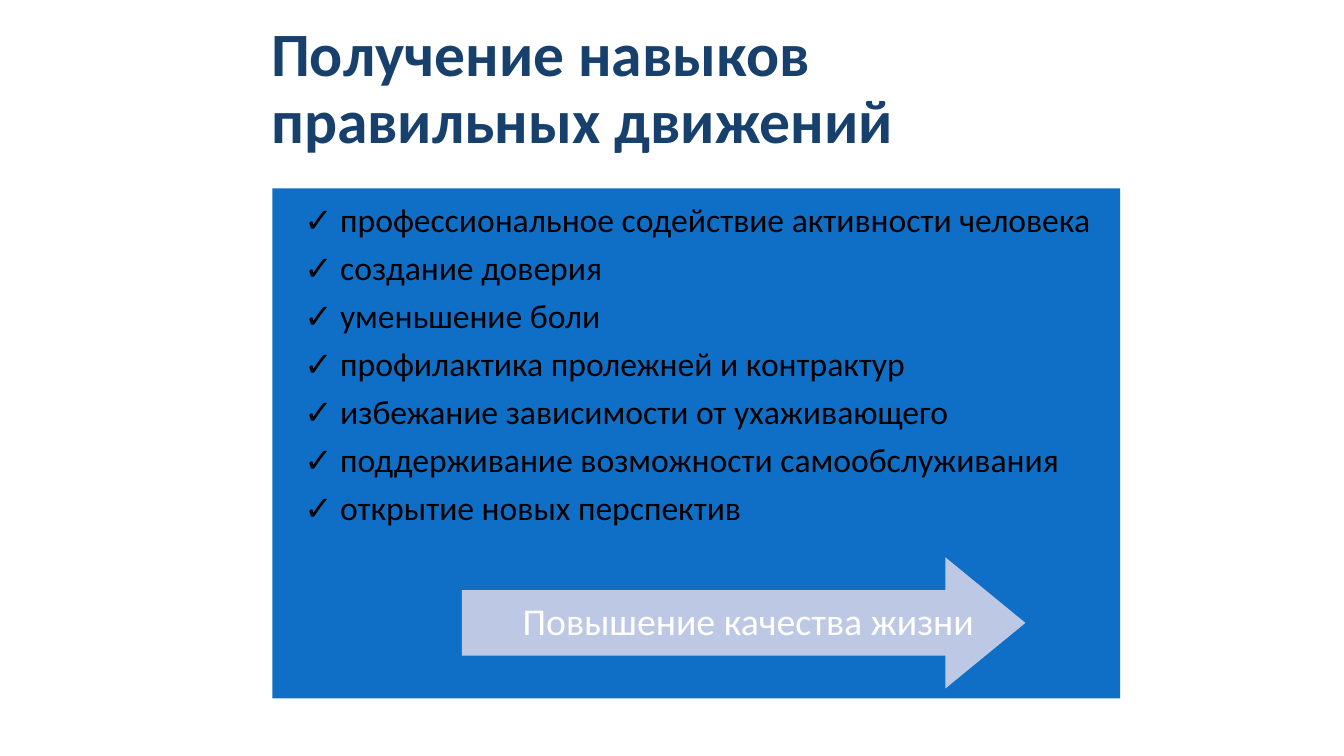
import pptx
import pptx.dml.color
import pptx.enum.shapes
import pptx.enum.text
import pptx.util

SLIDE_WIDTH = pptx.util.Inches(13.33)
SLIDE_HEIGHT = pptx.util.Inches(7.5)
FONT = "Calibri"
COLORS = {
    "title": "17406D",
    "panel": "0F6FC6",
    "item": "000000",
    "arrow": "BDC8E5",
    "label": "FFFFFF",
}
TITLE = "Получение навыков\vправильных движений"
GOALS = [
    "профессиональное содействие активности человека",
    "создание доверия",
    "уменьшение боли",
    "профилактика пролежней и контрактур",
    "избежание зависимости от ухаживающего",
    "поддерживание возможности самообслуживания",
    "открытие новых перспектив",
]
RESULT = "Повышение качества жизни"

# Left, top, width and height in percent of the slide
TITLE_AREA = (19.43, 2.27, 80.57, 19.33)
PANEL_AREA = (20.26, 24.93, 63.09, 67.47)
GOALS_AREA = (21.91, 25.6, 60.77, 49.73)
ARROW_AREA = (34.36, 73.73, 41.94, 17.33)
LABEL_WIDTH = 38.93


def to_lengths(area):
    """Turn percentages of the slide into lengths."""
    sides = (SLIDE_WIDTH, SLIDE_HEIGHT) * 2
    return [int(side * share / 100) for side, share in zip(sides, area)]


def rgb(name):
    return pptx.dml.color.RGBColor.from_string(COLORS[name])


def format_para(para, size, color, bold=False):
    para.line_spacing = 0.9
    para.font.name = FONT
    para.font.size = pptx.util.Pt(size)
    para.font.bold = bold
    para.font.color.rgb = rgb(color)


def set_title(page):
    title = page.shapes.title
    title.left, title.top, title.width, title.height = to_lengths(TITLE_AREA)
    frame = title.text_frame
    frame.text = TITLE
    frame.word_wrap = True
    frame.vertical_anchor = pptx.enum.text.MSO_ANCHOR.MIDDLE
    para = frame.paragraphs[0]
    para.alignment = pptx.enum.text.PP_ALIGN.LEFT
    format_para(para, 44, "title", bold=True)


def add_filled_shape(group, kind, area, color):
    shape = group.shapes.add_shape(kind, *to_lengths(area))
    shape.shadow.inherit = False
    shape.fill.solid()
    shape.fill.fore_color.rgb = rgb(color)
    shape.line.fill.background()
    return shape


def add_text(group, area, lines, size, color, inset, alignment, anchor):
    box = group.shapes.add_textbox(*to_lengths(area))
    frame = box.text_frame
    frame.word_wrap = True
    frame.vertical_anchor = anchor
    frame.margin_left = frame.margin_right = pptx.util.Inches(inset)
    frame.margin_top = frame.margin_bottom = pptx.util.Inches(inset)
    for index, line in enumerate(lines):
        para = frame.add_paragraph() if index else frame.paragraphs[0]
        para.text = line
        para.alignment = alignment
        para.space_after = pptx.util.Pt(round(size * 0.35, 1))
        format_para(para, size, color)


def add_result_arrow(group):
    arrow = add_filled_shape(
        group, pptx.enum.shapes.MSO_SHAPE.RIGHT_ARROW, ARROW_AREA, "arrow")
    arrow.adjustments[0] = 0.5
    arrow.adjustments[1] = 0.61
    left, top, _, height = ARROW_AREA
    shaft = (left, top + height / 4, LABEL_WIDTH, height / 2)
    add_text(group, shaft, [RESULT], 27, "label", 0.11,
             pptx.enum.text.PP_ALIGN.RIGHT, pptx.enum.text.MSO_ANCHOR.MIDDLE)


def main():
    deck = pptx.Presentation()
    deck.slide_width = SLIDE_WIDTH
    deck.slide_height = SLIDE_HEIGHT
    page = deck.slides.add_slide(deck.slide_layouts.get_by_name("Title Only"))
    set_title(page)
    group = page.shapes.add_group_shape()
    add_filled_shape(
        group, pptx.enum.shapes.MSO_SHAPE.RECTANGLE, PANEL_AREA, "panel")
    add_text(group, GOALS_AREA, [f"✓ {goal}" for goal in GOALS], 24, "item", 0.1,
             pptx.enum.text.PP_ALIGN.LEFT, pptx.enum.text.MSO_ANCHOR.TOP)
    add_result_arrow(group)
    deck.save("out.pptx")


if __name__ == "__main__":
    main()
